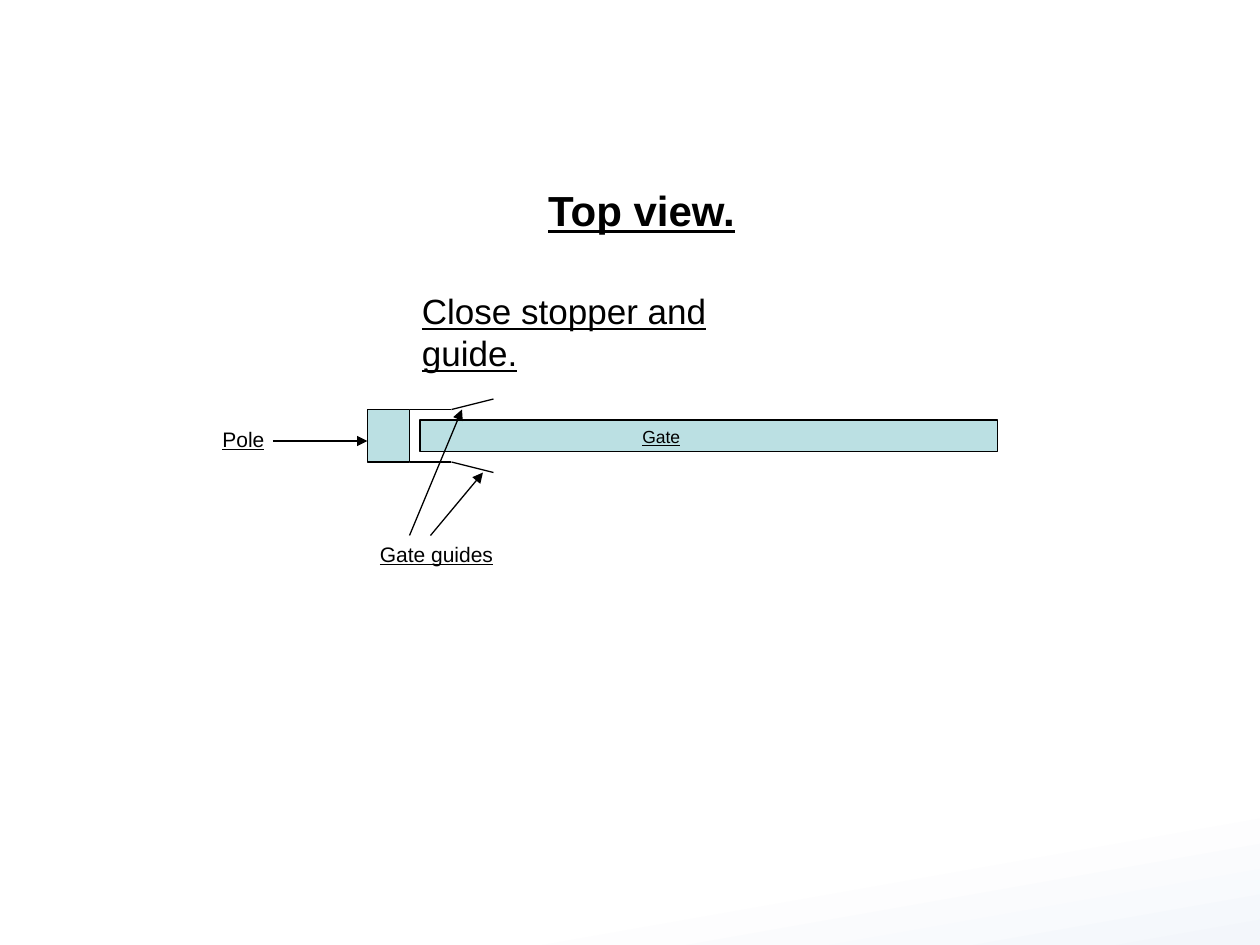
from lxml.etree import SubElement
from pptx import Presentation
from pptx.dml.color import RGBColor
from pptx.enum.shapes import MSO_CONNECTOR, MSO_SHAPE
from pptx.enum.text import MSO_ANCHOR, MSO_AUTO_SIZE, PP_ALIGN
from pptx.oxml.ns import qn
from pptx.util import Pt

BLACK = "000000"
TEAL = "BBE0E3"


def rgb(value):
    return RGBColor.from_string(value)


def write(sp, text, size, bold=False, wrap=False):
    tf = sp.text_frame
    tf.word_wrap = wrap
    tf.auto_size = MSO_AUTO_SIZE.NONE
    tf.vertical_anchor = MSO_ANCHOR.TOP
    p = tf.paragraphs[0]
    p.alignment = PP_ALIGN.LEFT
    r = p.add_run()
    r.text = text
    r.font.name = "Arial"
    r.font.size = Pt(size)
    r.font.bold = bold
    r.font.underline = True
    r.font.color.rgb = rgb(BLACK)


def add_label(s, x, y, w, h, text, size, wrap=False):
    sp = s.shapes.add_textbox(Pt(x), Pt(y), Pt(w), Pt(h))
    write(sp, text, size, wrap=wrap)


def add_box(s, x, y, w, h):
    sp = s.shapes.add_shape(MSO_SHAPE.RECTANGLE, Pt(x), Pt(y), Pt(w), Pt(h))
    sp.shadow.inherit = False
    sp.fill.solid()
    sp.fill.fore_color.rgb = rgb(TEAL)
    sp.line.color.rgb = rgb(BLACK)
    sp.line.width = Pt(0.75)


def add_line(s, x1, y1, x2, y2, arrow=False):
    line = s.shapes.add_connector(MSO_CONNECTOR.STRAIGHT, Pt(x1), Pt(y1), Pt(x2), Pt(y2))
    line.line.color.rgb = rgb(BLACK)
    line.line.width = Pt(0.75)
    if arrow:
        SubElement(line.line._get_or_add_ln(), qn("a:tailEnd"), type="triangle")
    SubElement(line._element.spPr, qn("a:effectLst"))


def set_background(s):
    fill = s.background.fill
    fill.gradient()
    fill.gradient_angle = 280
    for stop, (position, color) in zip(fill.gradient_stops, [(0.87, "FFFFFF"), (1, "F3F6FB")]):
        stop.position = position
        stop.color.rgb = rgb(color)


def add_title(s, x, y, w, h):
    title = s.shapes.title
    title.left, title.top, title.width, title.height = Pt(x), Pt(y), Pt(w), Pt(h)
    write(title, "Top view.", 24, bold=True)


def add_gate_plan(s, x, y):
    pole_x, pole_w, pole_h = x + 90, 24, 30
    guide_x = pole_x + pole_w
    for edge, flare in [(y, -6), (y + pole_h, 6)]:
        add_line(s, guide_x, edge, guide_x + 24, edge)
        add_line(s, guide_x + 24, edge, guide_x + 48, edge + flare)
    add_box(s, guide_x + 6, y + 6, 330, 18)
    add_box(s, pole_x, y, pole_w, pole_h)

    add_label(s, x, y + 6, 38, 22, "Pole", 12)
    add_label(s, pole_x, y + 72, 79, 22, "Gate guides", 12)
    add_label(s, x + 240, y + 6, 36, 19, "Gate", 10)

    add_line(s, guide_x + 12, y + 72, guide_x + 42, y + 36, arrow=True)
    add_line(s, guide_x, y + 72, guide_x + 30, y, arrow=True)
    add_line(s, x + 36, y + 18, pole_x, y + 18, arrow=True)


def main():
    prs = Presentation()
    prs.slide_width, prs.slide_height = Pt(720), Pt(540)
    s = prs.slides.add_slide(prs.slide_layouts[5])
    set_background(s)
    add_title(s, 306, 102, 124, 36)
    add_gate_plan(s, 120, 234)
    add_label(s, 234, 162, 234, 55, "Close stopper and guide.", 20, wrap=True)
    prs.save("out.pptx")


if __name__ == "__main__":
    main()
